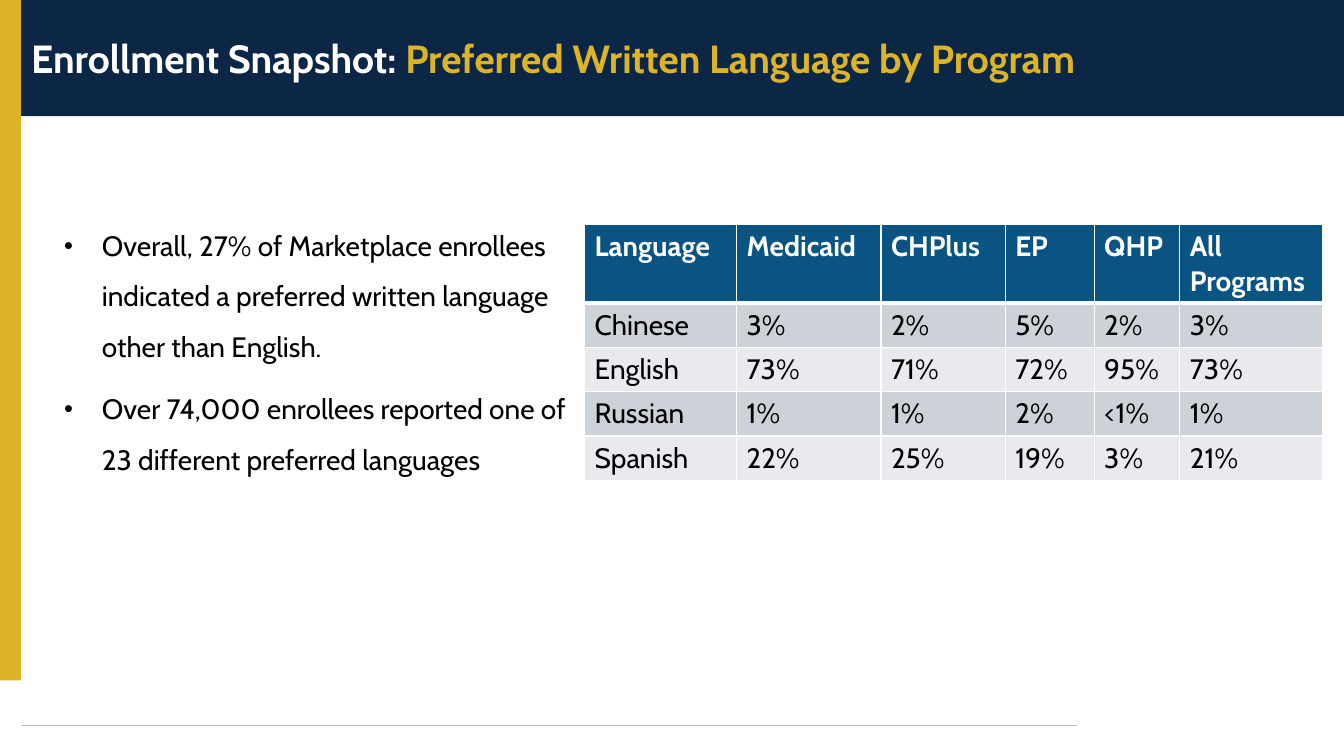
from dataclasses import dataclass

from lxml import etree
from pptx import Presentation
from pptx.dml.color import RGBColor
from pptx.enum.shapes import MSO_CONNECTOR, MSO_SHAPE
from pptx.enum.text import MSO_ANCHOR, MSO_AUTO_SIZE, PP_ALIGN
from pptx.oxml.ns import qn
from pptx.util import Pt

RECTANGLE = MSO_SHAPE.RECTANGLE
STRAIGHT = MSO_CONNECTOR.STRAIGHT
MIDDLE = MSO_ANCHOR.MIDDLE
NO_AUTOFIT = MSO_AUTO_SIZE.NONE
LEFT = PP_ALIGN.LEFT

FONT = "Cabin"
NAVY, GOLD, WHITE, BLACK = "0C2645", "DDB427", "FFFFFF", "000000"
HEADER_BLUE, RULE_GREY = "0A5483", "BFBFBF"
ROW_FILLS = ("CCD2D8", "E8EAED")

TITLE_SPANS = (
    ("Enrollment Snapshot: ", WHITE),
    ("Preferred Written Language by Program", GOLD),
)
FINDINGS = (
    "Overall, 27% of Marketplace enrollees indicated a preferred written "
    "language other than English.",
    "Over 74,000 enrollees reported one of 23 different preferred languages",
)
LANGUAGE_ROWS = (
    ("Language", "Medicaid", "CHPlus", "EP", "QHP", "All Programs"),
    ("Chinese", "3%", "2%", "5%", "2%", "3%"),
    ("English", "73%", "71%", "72%", "95%", "73%"),
    ("Russian", "1%", "1%", "2%", "<1%", "1%"),
    ("Spanish", "22%", "25%", "19%", "3%", "21%"),
)
COLUMN_WIDTHS = (108.5, 103.2, 88.8, 63.5, 61.2, 102.3)
HEADER_HEIGHT, ROW_HEIGHT = 55.2, 31.6


@dataclass(frozen=True)
class Band:
    left: float
    top: float
    width: float
    height: float
    color: str


BANDS = (
    Band(15, 0, 945, 83, NAVY),
    Band(0, 0, 15, 486, GOLD),
)


def rgb(color: str) -> RGBColor:
    return RGBColor.from_string(color)


def style_font(font, size: float, color: str, bold: bool = False) -> None:
    font.name = FONT
    font.size = Pt(size)
    font.bold = bold
    font.color.rgb = rgb(color)


def add_band(page, band: Band) -> None:
    shape = page.shapes.add_shape(
        RECTANGLE, Pt(band.left), Pt(band.top), Pt(band.width), Pt(band.height))
    shape.shadow.inherit = False
    shape.fill.solid()
    shape.fill.fore_color.rgb = rgb(band.color)
    shape.line.fill.background()


def add_footer_rule(page) -> None:
    rule = page.shapes.add_connector(STRAIGHT, Pt(15), Pt(518.4), Pt(769), Pt(518.4))
    rule.line.color.rgb = rgb(RULE_GREY)
    rule.line.width = Pt(1)
    etree.SubElement(rule.element.spPr, qn("a:effectLst"))


def fill_title(page) -> None:
    """Place the title and bring it in front of the navy band."""
    title = page.shapes.title
    title.left, title.top, title.width, title.height = Pt(15), Pt(8), Pt(930), Pt(67)
    title.element.getparent().append(title.element)
    frame = title.text_frame
    frame.auto_size = NO_AUTOFIT
    frame.vertical_anchor = MIDDLE
    para = frame.paragraphs[0]
    para.alignment = LEFT
    for text, color in TITLE_SPANS:
        span = para.add_run()
        span.text = text
        style_font(span.font, 28, color, bold=True)


def add_bullet(para) -> None:
    properties = para._p.get_or_add_pPr()
    properties.set("marL", str(Pt(34)))
    properties.set("indent", str(-Pt(27)))
    etree.SubElement(properties, qn("a:buSzPct"), val="91000")
    etree.SubElement(properties, qn("a:buFont"), typeface="Arial")
    etree.SubElement(properties, qn("a:buChar"), char="•")


def add_findings(page) -> None:
    box = page.shapes.add_textbox(Pt(31.7), Pt(147.6), Pt(386), Pt(257.8))
    frame = box.text_frame
    frame.word_wrap = True
    for index, finding in enumerate(FINDINGS):
        para = frame.add_paragraph() if index else frame.paragraphs[0]
        para.text = finding
        add_bullet(para)
        para.line_spacing = 1.5
        if index:
            para.space_before = Pt(8.6)
        style_font(para.font, 20, BLACK)


def add_borders(cell, bottom_width: float) -> None:
    properties = cell._tc.get_or_add_tcPr()
    for side, width in (("L", 1), ("R", 1), ("T", 1), ("B", bottom_width)):
        line = etree.SubElement(properties, qn(f"a:ln{side}"), w=str(Pt(width)))
        fill = etree.SubElement(line, qn("a:solidFill"))
        etree.SubElement(fill, qn("a:srgbClr"), val=WHITE)


def add_language_table(page) -> None:
    body_rows = len(LANGUAGE_ROWS) - 1
    frame = page.shapes.add_table(
        len(LANGUAGE_ROWS), len(COLUMN_WIDTHS), Pt(417.6), Pt(160.6),
        Pt(sum(COLUMN_WIDTHS)), Pt(HEADER_HEIGHT + body_rows * ROW_HEIGHT))
    table = frame.table
    table.horz_banding = False
    for column, width in zip(table.columns, COLUMN_WIDTHS):
        column.width = Pt(width)
    for row_index, texts in enumerate(LANGUAGE_ROWS):
        header = row_index == 0
        table.rows[row_index].height = Pt(HEADER_HEIGHT if header else ROW_HEIGHT)
        row_fill = HEADER_BLUE if header else ROW_FILLS[(row_index - 1) % 2]
        for cell, text in zip(table.rows[row_index].cells, texts):
            add_borders(cell, 3 if header else 1)
            cell.fill.solid()
            cell.fill.fore_color.rgb = rgb(row_fill)
            cell.text = text
            style_font(cell.text_frame.paragraphs[0].font, 20,
                       WHITE if header else BLACK, bold=header)


def main() -> None:
    deck = Presentation()
    deck.slide_width, deck.slide_height = Pt(960), Pt(540)
    page = deck.slides.add_slide(deck.slide_layouts.get_by_name("Title Only"))
    for band in BANDS:
        add_band(page, band)
    fill_title(page)
    add_footer_rule(page)
    add_language_table(page)
    add_findings(page)
    deck.save("out.pptx")


if __name__ == "__main__":
    main()
